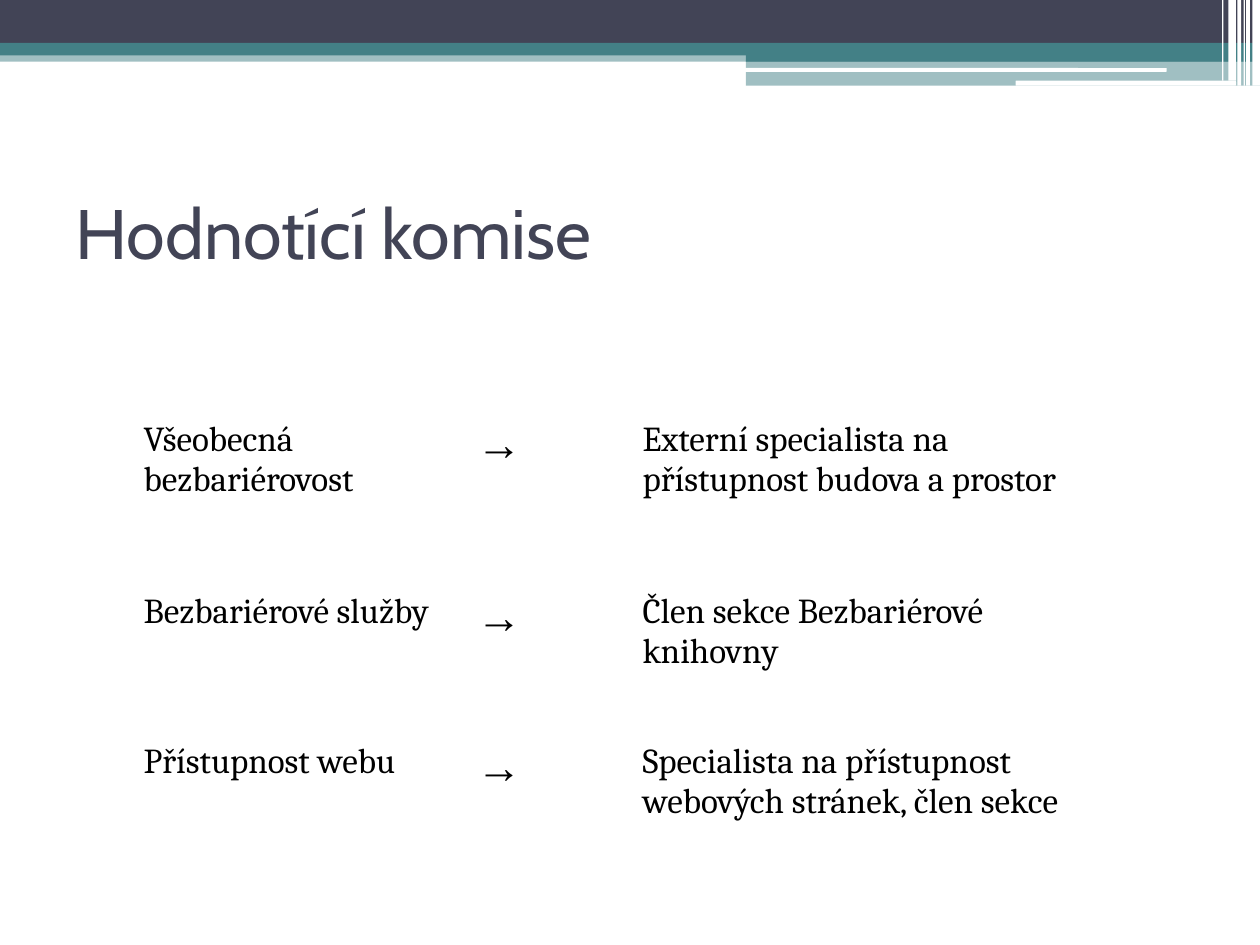
from lxml.etree import SubElement
from pptx import Presentation
from pptx.dml.color import RGBColor
from pptx.enum.shapes import MSO_SHAPE as Shape
from pptx.enum.text import MSO_ANCHOR as Anchor, PP_ALIGN as Align
from pptx.oxml.ns import qn
from pptx.util import Inches, Pt

COLORS = {"navy": "424456", "teal": "438086", "white": "FFFFFF", "black": "000000"}


def style_run(para, font, size, color):
    span = para.runs[0]
    span.font.name = font
    span.font.size = Pt(size)
    span.font.color.rgb = RGBColor.from_string(COLORS[color])


def add_border(cell, width, color):
    """Draw a solid line on all four sides of a table cell."""
    properties = cell._tc.get_or_add_tcPr()
    for index, side in enumerate(("a:lnL", "a:lnR", "a:lnT", "a:lnB")):
        line = properties.makeelement(qn(side), {"w": str(Pt(width))})
        fill = SubElement(line, qn("a:solidFill"))
        SubElement(fill, qn("a:srgbClr"), val=COLORS[color])
        properties.insert(index, line)


deck = Presentation()
deck.slide_width, deck.slide_height = Inches(10), Inches(7.5)
page = deck.slides.add_slide(deck.slide_layouts[5])

# Header bands and the white lines that cut through them
bands = [
    (Shape.RECTANGLE, 0, 0.4, 10, 0.09, "teal", 50),
    (Shape.RECTANGLE, 0, 0, 10, 0.34, "navy", 100),
    (Shape.RECTANGLE, 0, 0.34, 10, 0.1, "teal", 100),
    (Shape.RECTANGLE, 5.92, 0.39, 4.08, 0.1, "teal", 100),
    (Shape.RECTANGLE, 5.92, 0.48, 4.08, 0.2, "teal", 50),
    (Shape.ROUNDED_RECTANGLE, 5.91, 0.54, 3.35, 0.03, "white", 100),
    (Shape.ROUNDED_RECTANGLE, 8.06, 0.64, 1.75, 0.04, "white", 100),
]
stripes = [(9.94, 0.06, 0.68), (9.89, 0.03, 0.68), (9.87, 0.01, 0.68),
           (9.82, 0.03, 0.68), (9.75, 0.06, 0.64), (9.7, 0.01, 0.64)]
bands += [(Shape.RECTANGLE, left, 0, width, height, "white", 100)
          for left, width, height in stripes]

for kind, left, top, width, height, color, opacity in bands:
    band = page.shapes.add_shape(kind, Inches(left), Inches(top), Inches(width), Inches(height))
    band.shadow.inherit = False
    band.fill.solid()
    band.fill.fore_color.rgb = RGBColor.from_string(COLORS[color])
    band.line.fill.background()
    if opacity < 100:
        tint = band._element.spPr.find(qn("a:solidFill"))[0]
        SubElement(tint, qn("a:alpha"), val=str(opacity * 1000))

# Title
title = page.shapes.title
title.left, title.top = Inches(0.5), Inches(1.25)
title.width, title.height = Inches(9), Inches(1.17)
title.text_frame.text = "Hodnotící komise"
title.text_frame.vertical_anchor = Anchor.MIDDLE
title.text_frame.paragraphs[0].alignment = Align.LEFT
style_run(title.text_frame.paragraphs[0], "Cabin", 40, "navy")

# Evaluated area, arrow, evaluator
evaluators = [
    ("Všeobecná bezbariérovost", "Externí specialista na přístupnost budova a prostor"),
    ("Bezbariérové služby", "Člen sekce Bezbariérové knihovny"),
    ("Přístupnost webu", "Specialista na přístupnost webových stránek, člen sekce"),
]
column_widths = (2.64, 1.32, 3.96)
row_heights = (1.37, 1.19, 0.42)
table = page.shapes.add_table(
    len(row_heights), len(column_widths), Inches(1.04), Inches(3.23),
    Inches(sum(column_widths)), Inches(sum(row_heights))).table
table.first_row = table.horz_banding = False
for column, width in zip(table.columns, column_widths):
    column.width = Inches(width)

for row, height, (area, evaluator) in zip(table.rows, row_heights, evaluators):
    row.height = Inches(height)
    for cell, text in zip(row.cells, (area, "→", evaluator)):
        cell.margin_left = cell.margin_right = Inches(0.1)
        cell.margin_top = cell.margin_bottom = Inches(0.1)
        cell.fill.background()
        add_border(cell, 0.75, "white")
        cell.text_frame.text = text
        para = cell.text_frame.paragraphs[0]
        if text == "→":
            style_run(para, "Arial", 26, "black")
        else:
            para.space_before = Pt(3)
            style_run(para, "Cambria", 20, "black")

deck.save("out.pptx")
